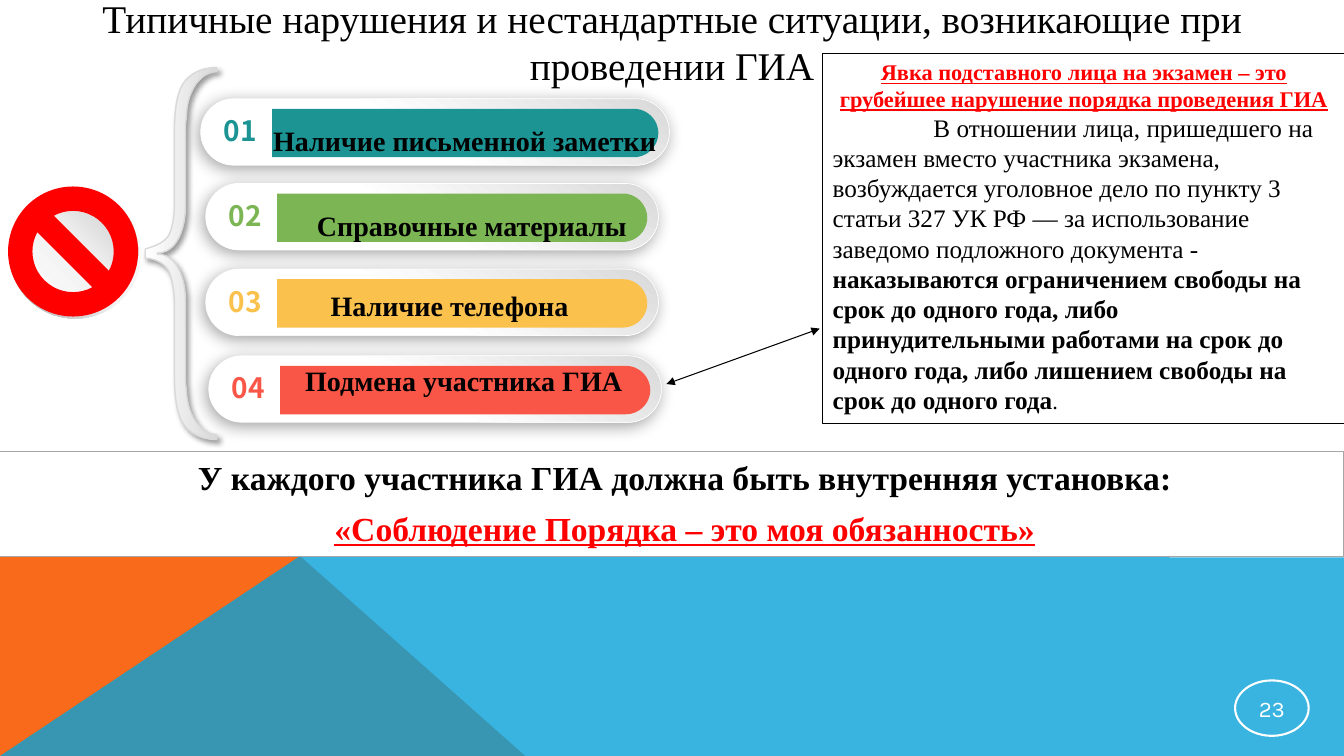
import dataclasses
import pptx
import pptx.dml.color
import pptx.enum.shapes
import pptx.enum.text
import pptx.oxml.ns
import pptx.util
import lxml.etree

Inches = pptx.util.Inches
Kind = pptx.enum.shapes.MSO_SHAPE
Align = pptx.enum.text.PP_ALIGN
Anchor = pptx.enum.text.MSO_ANCHOR
Fit = pptx.enum.text.MSO_AUTO_SIZE
qn = pptx.oxml.ns.qn


@dataclasses.dataclass(frozen=True)
class Theme:
    serif: str = "Times New Roman"
    digit: str = "Noto Sans CJK SC"
    page: str = "Karla"
    black: str = "000000"
    white: str = "FFFFFF"
    red: str = "FF0000"
    pale: str = "F2F2F2"
    light: str = "D9D9D9"
    mid: str = "BFBFBF"
    grey: str = "A6A6A6"
    orange: str = "F96A1B"
    blue: str = "08A1D9"
    title: float = 28
    motto: float = 24
    label: float = 20
    body: float = 18
    small: float = 16


T = Theme()

TITLE = "Типичные нарушения и нестандартные ситуации, возникающие при проведении ГИА"
ROWS = [
    ("01", "Наличие письменной заметки", "1C9494", (1.99, 0.98, 4.65), (4.61, 1.01)),
    ("02", "Справочные материалы", "7CB554", (2.04, 1.82, 4.49), (4.68, 1.85)),
    ("03", "Наличие телефона", "FAC14D", (2.04, 2.67, 4.49), (4.46, 2.65)),
    ("04", "Подмена участника ГИА", "F95647", (2.07, 3.53, 4.49), (4.6, 3.39)),
]
ALERT = "Явка подставного лица на экзамен – это грубейшее нарушение порядка проведения ГИА"
CASE = ("В отношении лица, пришедшего на экзамен вместо участника экзамена, возбуждается "
        "уголовное дело по пункту 3 статьи 327 УК РФ — за использование заведомо "
        "подложного документа - ")
TERM = ("наказываются ограничением свободы на срок до одного года, либо принудительными "
        "работами на срок до одного года, либо лишением свободы на срок до одного года")
MOTTO = [
    ("У каждого участника ГИА должна быть внутренняя установка:", T.black, False),
    ("«Соблюдение Порядка – это моя обязанность»", T.red, True),
]
PAGE = "23"
LEFT = [(0, 7.5), (0, 5.52), (2.98, 5.52), (5.21, 7.5)]
WIDE = [(0, 7.5), (2.97, 5.52), (13.33, 5.53), (13.33, 7.5)]
BRACE = [
    (2.15, 0.67), (2.15, 0.71),
    ((1.99, 0.71), (1.86, 0.9), (1.85, 1.13)), (1.84, 1.24), (1.84, 2.04),
    ((1.84, 2.26), (1.76, 2.51), (1.56, 2.51)), (1.56, 2.52),
    ((1.76, 2.52), (1.84, 2.77), (1.84, 2.99)), (1.84, 3.79), (1.85, 3.89),
    ((1.86, 4.12), (1.99, 4.31), (2.15, 4.31)), (2.15, 4.36),
    ((2.01, 4.36), (1.9, 4.31), (1.83, 4.22)),
    ((1.76, 4.13), (1.73, 3.96), (1.73, 3.72)), (1.73, 3.02),
    ((1.73, 2.89), (1.71, 2.78), (1.68, 2.7)),
    ((1.64, 2.62), (1.56, 2.57), (1.44, 2.56)), (1.44, 2.47),
    ((1.55, 2.44), (1.63, 2.4), (1.67, 2.34)),
    ((1.71, 2.27), (1.73, 2.16), (1.73, 2.01)), (1.73, 1.31),
    ((1.73, 1.07), (1.76, 0.9), (1.83, 0.81)),
    ((1.9, 0.72), (2.01, 0.67), (2.15, 0.67)),
]


def tint(code):
    return pptx.dml.color.RGBColor.from_string(code)


def write(par, text, font=T.serif, size=T.label, color=T.black, bold=False, under=False):
    run = par.add_run()
    run.text = text
    face = run.font
    face.name, face.size, face.bold, face.underline = font, pptx.util.Pt(size), bold, under
    face.color.rgb = tint(color)
    for tag in ("a:ea", "a:cs"):
        lxml.etree.SubElement(run._r.rPr, qn(tag), typeface=font)


def indent(par, left, first):
    props = par._p.get_or_add_pPr()
    props.set("marL", str(Inches(left)))
    props.set("indent", str(Inches(first)))


def shade(shape, stops, angle):
    shape.fill.gradient()
    shape.fill.gradient_angle = (360 - angle) % 360
    bag = shape._element.spPr.find(".//" + qn("a:gsLst"))
    for old in list(bag):
        bag.remove(old)
    for place, code in stops:
        stop = lxml.etree.SubElement(bag, qn("a:gs"), pos=str(place * 1000))
        lxml.etree.SubElement(stop, qn("a:srgbClr"), val=code)


def shadow(shape, alpha, blur, angle):
    glow = lxml.etree.SubElement(
        shape._element.spPr.find(qn("a:effectLst")), qn("a:outerShdw"),
        blurRad=str(pptx.util.Pt(blur)), dist=str(pptx.util.Pt(3)),
        dir=str(angle * 60000), algn="ctr", rotWithShape="0")
    code = lxml.etree.SubElement(glow, qn("a:srgbClr"), val=T.black)
    lxml.etree.SubElement(code, qn("a:alpha"), val=str(alpha * 1000))


def style(shape, fill=None, line=None, width=0.75):
    shape.shadow.inherit = False
    if fill:
        shape.fill.solid()
        shape.fill.fore_color.rgb = tint(fill)
    else:
        shape.fill.background()
    if line:
        shape.line.color.rgb = tint(line)
        shape.line.width = pptx.util.Pt(width)
    else:
        shape.line.fill.background()
    return shape


def draw(kind, box, **look):
    return style(slide.shapes.add_shape(kind, *map(Inches, box)), **look)


def trace(parts, **look):
    dots = [parts[0]]
    for part in parts[1:]:
        if not isinstance(part[0], tuple):
            dots.append(part)
            continue
        a, (b, c, d) = dots[-1], part
        for step in range(1, 13):
            t = step / 12
            u = 1 - t
            dots.append(tuple(u**3 * a[i] + 3 * u * u * t * b[i] + 3 * u * t * t * c[i]
                              + t**3 * d[i] for i in (0, 1)))
    dots = [(Inches(x), Inches(y)) for x, y in dots]
    form = slide.shapes.build_freeform(*dots[0], scale=1.0)
    form.add_line_segments(dots[1:], close=True)
    return style(form.convert_to_shape(), **look)


def setup(frame, wrap=True, fit=Fit.NONE, anchor=Anchor.TOP, pad=(0.1, 0.05)):
    frame.word_wrap, frame.auto_size, frame.vertical_anchor = wrap, fit, anchor
    frame.margin_left = frame.margin_right = Inches(pad[0])
    frame.margin_top = frame.margin_bottom = Inches(pad[1])
    return frame


def label(box, **form):
    return setup(slide.shapes.add_textbox(*map(Inches, box)).text_frame, **form)


deck = pptx.Presentation()
deck.slide_width, deck.slide_height = Inches(13.33), Inches(7.5)
slide = deck.slides.add_slide(deck.slide_layouts[5])

trace(LEFT, fill=T.orange)
floor = trace(WIDE, fill=T.blue)
code = floor._element.spPr.find(qn("a:solidFill"))[0]
lxml.etree.SubElement(code, qn("a:alpha"), val="80000")

head = slide.shapes.title
head.left, head.top, head.width, head.height = map(Inches, (0, 0.02, 13.33, 0.78))
par = setup(head.text_frame, anchor=Anchor.MIDDLE).paragraphs[0]
par.alignment = Align.CENTER
write(par, TITLE, size=T.title)

for num, text, color, (x, y, w), (mid, top) in ROWS:
    pill = draw(Kind.ROUNDED_RECTANGLE, (x, y, w, 0.66), line=T.white, width=0.5)
    pill.adjustments[0] = 0.5
    shade(pill, [(45, T.white), (100, T.light)], 300)
    shadow(pill, 34, 12, 135)
    l, r, t, b = x + 0.71, x + w - 0.11, y + 0.1, y + 0.58
    c, m = r - 0.24, (t + b) / 2
    trace([(l, t), (c, t), ((c + 0.13, t), (r, m - 0.13), (r, m)),
           ((r, m + 0.13), (c + 0.13, b), (c, b)), (l, b)], fill=color)
    par = label((x + 0.13, t, 0.56, 0.44), wrap=False, fit=Fit.SHAPE_TO_FIT_TEXT).paragraphs[0]
    write(par, num, font=T.digit, color=color, bold=True)
    par = label((mid - 2.15, top, 4.3, 0.55)).paragraphs[0]
    par.alignment, par.line_spacing = Align.CENTER, 1.5
    write(par, text, bold=True)

ring = draw(Kind.DONUT, (0.09, 1.85, 1.31, 1.31))
ring.adjustments[0] = 0.049
shade(ring, [(0, T.white), (55, T.pale), (100, T.grey)], 135)
disc = draw(Kind.OVAL, (0.12, 1.87, 1.25, 1.25))
shade(disc, [(0, T.white), (51, T.pale), (100, T.mid)], 315)
brace = trace(BRACE, line=T.light, width=1)
shade(brace, [(0, T.white), (100, T.light)], 0)
shadow(brace, 40, 4, 45)
draw(Kind.NO_SYMBOL, (0.08, 1.85, 1.29, 1.29), fill=T.red)

frame = setup(draw(Kind.RECTANGLE, (0, 4.48, 13.33, 1.04), line=T.grey).text_frame)
for i, (text, color, under) in enumerate(MOTTO):
    par = frame.add_paragraph() if i else frame.paragraphs[0]
    par.alignment, par.space_before = Align.CENTER, pptx.util.Pt(8)
    indent(par, 0.5, -0.25)
    write(par, text, size=T.motto, color=color, bold=True, under=under)

frame = setup(draw(Kind.RECTANGLE, (8.16, 0.53, 5.18, 3.67), line=T.black).text_frame)
par = frame.paragraphs[0]
par.alignment = Align.CENTER
write(par, ALERT, size=T.small, color=T.red, bold=True, under=True)
par = frame.add_paragraph()
par.alignment = Align.LEFT
indent(par, 0, 1)
write(par, CASE, size=T.body)
write(par, TERM, size=T.body, bold=True)
write(par, ".", size=T.small)

link = slide.shapes.add_connector(pptx.enum.shapes.MSO_CONNECTOR.STRAIGHT,
                                  *map(Inches, (6.61, 3.81, 8.13, 3.26)))
link.line.color.rgb, link.line.width = tint(T.black), pptx.util.Pt(0.75)
for tag in ("a:headEnd", "a:tailEnd"):
    lxml.etree.SubElement(link.line._get_or_add_ln(), qn(tag), type="triangle")
lxml.etree.SubElement(link._element.spPr, qn("a:effectLst"))

badge = draw(Kind.OVAL, (12.25, 6.75, 0.73, 0.55), line=T.white, width=1.5)
par = setup(badge.text_frame, anchor=Anchor.MIDDLE, pad=(0.01, 0.01)).paragraphs[0]
par.alignment = Align.CENTER
write(par, PAGE, font=T.page, size=T.small, color=T.white)

deck.save("out.pptx")
